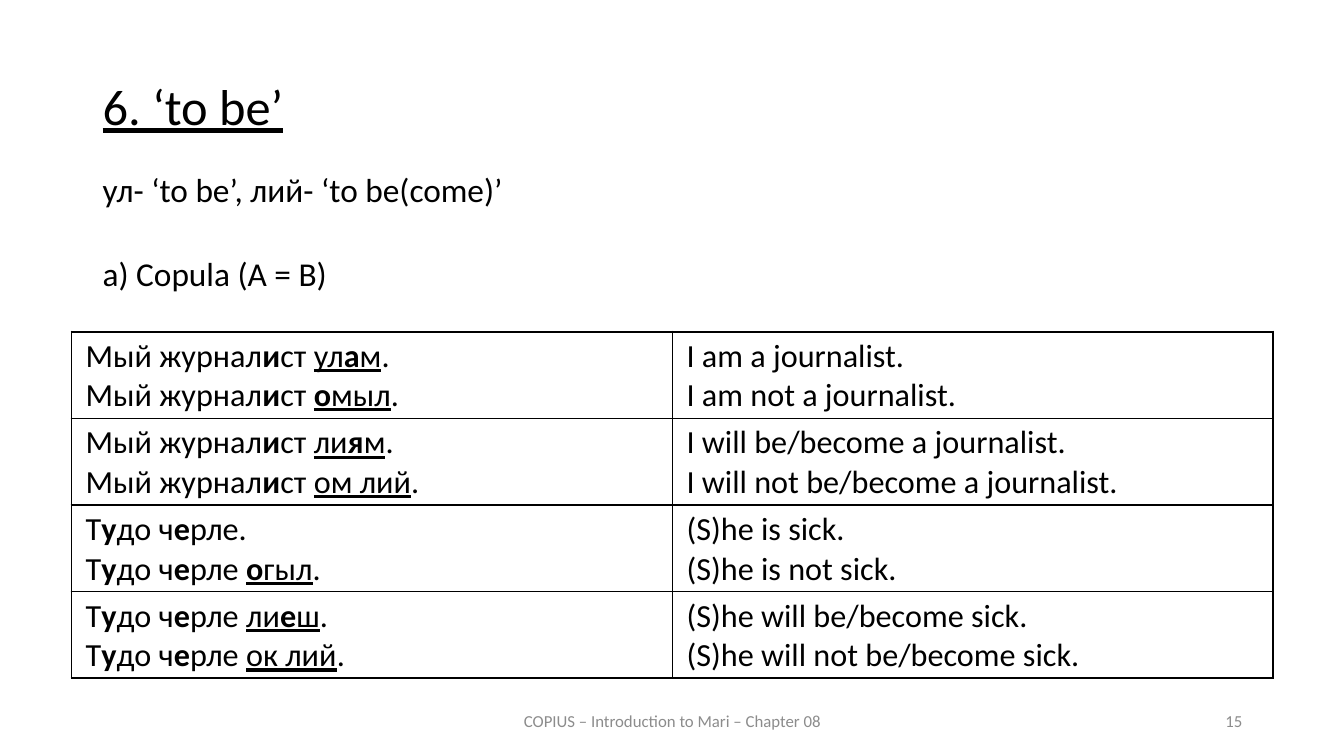
from lxml import etree
from pptx import Presentation
from pptx.dml.color import RGBColor
from pptx.enum.text import MSO_ANCHOR as Anchor, PP_ALIGN as Align
from pptx.oxml.ns import qn
from pptx.util import Inches, Pt

COLORS = {"ink": "000000", "footer": "8C8C8C"}
FONT = "Calibri"

TITLE = "6. ‘to be’"
INTRO = ["ул- ‘to be’, лий- ‘to be(come)’", "a) Copula (A = B)"]
FOOTER = "COPIUS – Introduction to Mari – Chapter 08"
PAGE = "15"

# *bold* marks the stressed vowel, _underline_ marks the verb
EXAMPLES = [
    (["Мый журнал*и*ст _ул*а*м_.", "Мый журнал*и*ст _*о*мыл_."],
     ["I am a journalist.", "I am not a journalist."]),
    (["Мый журнал*и*ст _ли*я*м_.", "Мый журнал*и*ст _ом лий_."],
     ["I will be/become a journalist.", "I will not be/become a journalist."]),
    (["Т*у*до ч*е*рле.", "Т*у*до ч*е*рле _*о*гыл_."],
     ["(S)he is sick.", "(S)he is not sick."]),
    (["Т*у*до ч*е*рле _ли*е*ш_.", "Т*у*до ч*е*рле _ок лий_."],
     ["(S)he will be/become sick.", "(S)he will not be/become sick."]),
]
EXAMPLES_LEFT, EXAMPLES_TOP = 0.71, 3.29
COLUMN_WIDTH, ROW_HEIGHT = 5.96, 0.86
OUTER, INNER = 1.5, 1


def add_marked_runs(paragraph, marked):
    """Add runs, toggling bold at each * and underline at each _."""
    bold = False
    for i, stretch in enumerate(marked.split("_")):
        for j, piece in enumerate(stretch.split("*")):
            if j:
                bold = not bold
            if piece:
                run = paragraph.add_run()
                run.text = piece
                if bold:
                    run.font.bold = True
                if i % 2:
                    run.font.underline = True


def write_lines(frame, lines, size, color="ink", align=Align.LEFT):
    frame.word_wrap = True
    for i, line in enumerate(lines):
        paragraph = frame.add_paragraph() if i else frame.paragraphs[0]
        paragraph.alignment = align
        font = paragraph.font
        font.name, font.size = FONT, Pt(size)
        font.color.rgb = RGBColor.from_string(COLORS[color])
        add_marked_runs(paragraph, line)
    return frame


def add_text(slide, box, lines, size, **style):
    shape = slide.shapes.add_textbox(*map(Inches, box))
    return write_lines(shape.text_frame, lines, size, **style)


def set_borders(cell, left, right, top, bottom):
    properties = cell._tc.get_or_add_tcPr()
    sides = {"a:lnL": left, "a:lnR": right, "a:lnT": top, "a:lnB": bottom}
    for i, (tag, width) in enumerate(sides.items()):
        line = etree.Element(qn(tag), w=str(Pt(width)))
        fill = etree.SubElement(line, qn("a:solidFill"))
        etree.SubElement(fill, qn("a:srgbClr"), val=COLORS["ink"])
        properties.insert(i, line)


def add_example(slide, index, pair):
    frame = slide.shapes.add_table(
        1, 2, Inches(EXAMPLES_LEFT), Inches(EXAMPLES_TOP + index * ROW_HEIGHT),
        Inches(2 * COLUMN_WIDTH), Inches(ROW_HEIGHT))
    table = frame.table
    table.first_row = table.horz_banding = False
    top = OUTER if index == 0 else INNER
    bottom = OUTER if index == len(EXAMPLES) - 1 else INNER
    sides = [(OUTER, INNER), (INNER, OUTER)]
    for cell, sentences, (left, right) in zip(table.iter_cells(), pair, sides):
        cell.fill.background()
        cell.vertical_anchor = Anchor.MIDDLE
        cell.margin_left = cell.margin_right = Inches(0.14)
        cell.margin_top, cell.margin_bottom = Inches(0.02), 0
        write_lines(cell.text_frame, sentences, 23)
        set_borders(cell, left, right, top, bottom)


def main():
    deck = Presentation()
    deck.slide_width, deck.slide_height = Inches(13.33), Inches(7.5)
    slide = deck.slides.add_slide(deck.slide_layouts[6])

    title = add_text(slide, (0.92, 0.76, 11.5, 0.83), [TITLE], 36,
                     align=Align.JUSTIFY).paragraphs[0]
    title.font.underline = True
    title.line_spacing, title.space_before = 0.9, Pt(12)

    intro = add_text(slide, (0.92, 1.74, 11.5, 1.33), INTRO, 23.8)
    for paragraph, gap in zip(intro.paragraphs, (10, 40)):
        paragraph.line_spacing, paragraph.space_before = 0.7, Pt(gap)

    for index, pair in enumerate(EXAMPLES):
        add_example(slide, index, pair)

    for box, text, align in [((4.42, 6.95, 4.5, 0.4), FOOTER, Align.CENTER),
                             ((9.42, 6.95, 3, 0.4), PAGE, Align.RIGHT)]:
        footer = add_text(slide, box, [text], 12, color="footer", align=align)
        footer.vertical_anchor = Anchor.MIDDLE

    deck.save("out.pptx")


if __name__ == "__main__":
    main()
